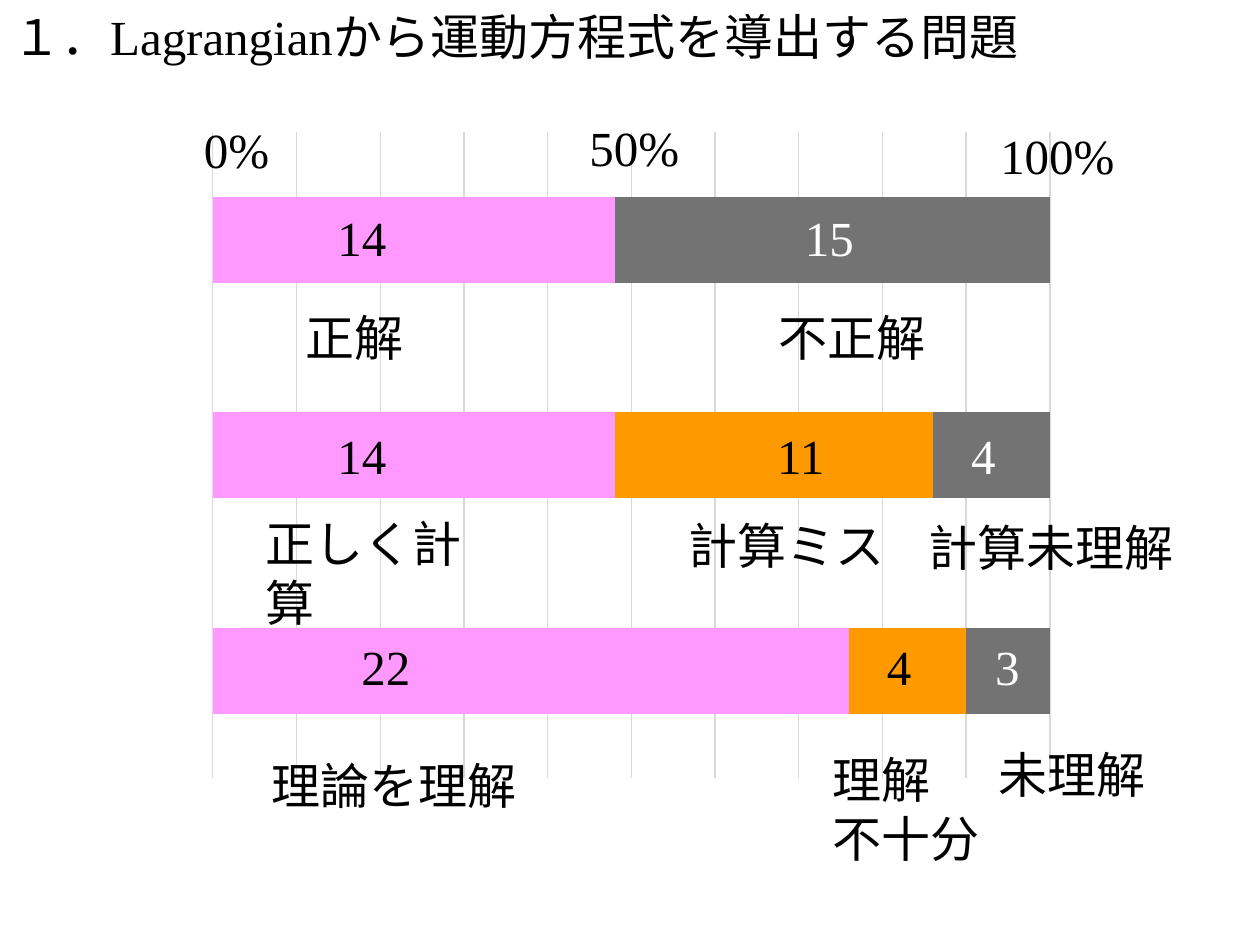
"""Build a slide of stacked bars on answers to a Lagrangian problem."""
import lxml.etree
import pptx
import pptx.chart.data
import pptx.dml.color
import pptx.enum.chart
import pptx.enum.text
import pptx.oxml.ns
import pptx.util

Inches = pptx.util.Inches
Pt = pptx.util.Pt
qn = pptx.oxml.ns.qn

COLORS = {"black": "000000", "white": "FFFFFF", "grid": "D9D9D9",
          "pink": "FF99FF", "orange": "FF9900", "gray": "737373"}
SERIES = [("Series 1", "pink", (76, 48, 48)),
          ("Series 2", "orange", (14, 38, 0)),
          ("Series 3", "gray", (10, 14, 52))]
PLOT = {"x": 0.02, "y": 0.028, "w": 0.956, "h": 0.944}
COUNTS = [
    (1.6, [("14", 2.58, 1.15, "black"), ("15", 6.29, 0.64, "white")]),
    (3.33, [("14", 2.58, 1.15, "black"), ("11", 6.07, 1.15, "black"),
            ("4", 7.61, 0.64, "white")]),
    (5, [("22", 2.77, 1.15, "black"), ("4", 6.94, 0.64, "black"),
         ("3", 7.8, 0.64, "white")]),
]
LABELS = [
    ("１．Lagrangianから運動方程式を導出する問題", 0, 0, 8.5),
    ("正解", 2.33, 2.39, 1.15),
    ("不正解", 6.08, 2.39, 1.57),
    ("正しく計算", 2.01, 4.03, 2.02),
    ("計算ミス", 5.37, 4.04, 1.8),
    ("計算未理解", 7.27, 4.06, 2.23),
    ("理論を理解", 2.06, 5.95, 2.52),
    ("理解\n不十分", 6.51, 5.9, 1.8),
    ("未理解", 7.83, 5.86, 1.49),
    ("0%", 1.52, 0.9, 0.87),
    ("50%", 4.58, 0.88, 1.07),
    ("100%", 7.84, 0.95, 1.19),
]


def color(name):
    return pptx.dml.color.RGBColor.from_string(COLORS[name])


class Board:
    """Hold the text style and the current slide."""

    def __init__(self, slide, font="Times New Roman", size=28):
        self.slide = slide
        self.font = font
        self.size = size

    def text(self, words, left, top, width, ink="black"):
        lines = words.split("\n")
        height = 0.57 + 0.47 * (len(lines) - 1)
        box = self.slide.shapes.add_textbox(
            Inches(left), Inches(top), Inches(width), Inches(height))
        frame = box.text_frame
        frame.word_wrap = True
        frame.auto_size = pptx.enum.text.MSO_AUTO_SIZE.SHAPE_TO_FIT_TEXT
        for num, line in enumerate(lines):
            para = frame.add_paragraph() if num else frame.paragraphs[0]
            run = para.add_run()
            run.text = line
            run.font.name = self.font
            run.font.size = Pt(self.size)
            run.font.color.rgb = color(ink)

    def bars(self, left, top, width, height):
        data = pptx.chart.data.CategoryChartData()
        data.categories = ["1", "2", "3"]
        for name, _, values in SERIES:
            data.add_series(name, values)
        chart = self.slide.shapes.add_chart(
            pptx.enum.chart.XL_CHART_TYPE.BAR_STACKED_100,
            Inches(left), Inches(top), Inches(width), Inches(height),
            data).chart
        chart.has_legend = False
        chart.has_title = False
        chart.font.name = self.font
        chart.font.size = Pt(10)
        chart.font.color.rgb = color("black")
        plot = chart.plots[0]
        plot.gap_width = 150
        plot.overlap = 100
        plot.vary_by_categories = False
        for series, (_, fill, _) in zip(plot.series, SERIES):
            series.format.fill.solid()
            series.format.fill.fore_color.rgb = color(fill)
        chart.category_axis.visible = False
        axis = chart.value_axis
        axis.visible = False
        axis.minimum_scale = 0
        axis.maximum_scale = 1
        axis.major_unit = 0.1
        axis.has_major_gridlines = True
        line = axis.major_gridlines.format.line
        line.color.rgb = color("grid")
        line.width = Pt(0.75)
        self.place(chart)

    def place(self, chart):
        area = chart.plots[0]._element.getparent()
        for old in area.findall(qn("c:layout")):
            area.remove(old)
        layout = lxml.etree.Element(qn("c:layout"))
        area.insert(0, layout)
        manual = lxml.etree.SubElement(layout, qn("c:manualLayout"))
        parts = [("layoutTarget", "inner"), ("xMode", "edge"),
                 ("yMode", "edge"), *PLOT.items()]
        for tag, value in parts:
            part = lxml.etree.SubElement(manual, qn("c:" + tag))
            part.set("val", str(value))


def main():
    deck = pptx.Presentation()
    deck.slide_width = Inches(10)
    deck.slide_height = Inches(7.5)
    board = Board(deck.slides.add_slide(deck.slide_layouts[6]))
    board.bars(1.55, 0.9, 6.95, 5.43)
    for top, row in COUNTS:
        for words, left, width, ink in row:
            board.text(words, left, top, width, ink)
    for label in LABELS:
        board.text(*label)
    deck.save("out.pptx")


if __name__ == "__main__":
    main()
